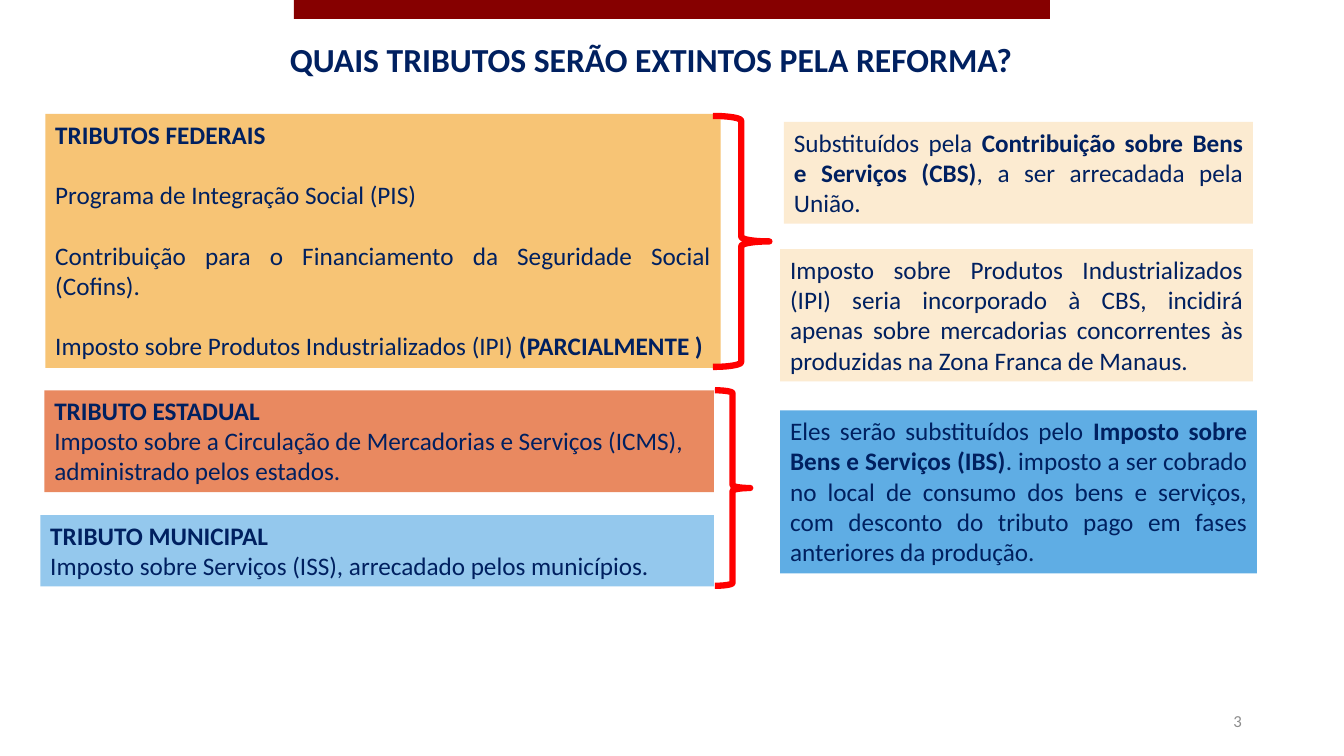
"""Builds the slide on the taxes abolished by the Brazilian tax reform."""
import pptx
import pptx.dml.color
import pptx.enum.shapes
import pptx.enum.text
import pptx.util

Pt = pptx.util.Pt
ALIGN = pptx.enum.text.PP_ALIGN
ANCHOR = pptx.enum.text.MSO_ANCHOR
SHAPE = pptx.enum.shapes.MSO_SHAPE
COLORS = {
    "banner": "860000",
    "text": "002060",
    "number": "8C8C8C",
    "federal": "F7C475",
    "state": "E98960",
    "municipal": "94C8ED",
    "cbs": "FCEBD1",
    "ibs": "5FADE4",
    "brace": "FF0000",
}


class TaxSlide:
    """Holds the style and the current slide."""

    font_name = "Calibri"
    body_size = 18

    def __init__(self, presentation):
        self.slide = presentation.slides.add_slide(presentation.slide_layouts[6])

    def color(self, name):
        return pptx.dml.color.RGBColor.from_string(COLORS[name])

    def shape(self, kind, left, top, width, height):
        shape = self.slide.shapes.add_shape(kind, Pt(left), Pt(top), Pt(width), Pt(height))
        shape.shadow.inherit = False
        return shape

    def block(self, fill, left, top, width, height):
        shape = self.shape(SHAPE.RECTANGLE, left, top, width, height)
        shape.fill.solid()
        shape.fill.fore_color.rgb = self.color(fill)
        shape.line.fill.background()
        return shape

    def brace(self, left, top, width, height):
        shape = self.shape(SHAPE.RIGHT_BRACE, left, top, width, height)
        shape.fill.background()
        shape.line.color.rgb = self.color("brace")
        shape.line.width = Pt(4.5)

    def add_text(self, shape, paragraphs, align, size=body_size, color="text", gap=0, anchor=ANCHOR.TOP):
        frame = shape.text_frame
        frame.word_wrap = True
        frame.vertical_anchor = anchor
        for index, runs in enumerate(paragraphs):
            paragraph = frame.add_paragraph() if index else frame.paragraphs[0]
            paragraph.alignment = align
            if index and gap:
                paragraph.space_before = Pt(gap)
            paragraph.font.name = self.font_name
            paragraph.font.size = Pt(size)
            paragraph.font.color.rgb = self.color(color)
            for text, bold in runs:
                run = paragraph.add_run()
                run.text = text
                if bold:
                    run.font.bold = True

    def card(self, fill, box, paragraphs, align=ALIGN.JUSTIFY, gap=0):
        shape = self.block(fill, *box)
        self.add_text(shape, paragraphs, align, gap=gap)
        shape.text_frame.auto_size = pptx.enum.text.MSO_AUTO_SIZE.SHAPE_TO_FIT_TEXT

    def label(self, box, runs, align, **style):
        shape = self.slide.shapes.add_textbox(*map(Pt, box))
        self.add_text(shape, [runs], align, **style)


def main():
    presentation = pptx.Presentation()
    presentation.slide_width = Pt(960)
    presentation.slide_height = Pt(540)
    slide = TaxSlide(presentation)

    slide.block("banner", 210, 0, 540, 13.5)
    slide.label(
        (32.4, 24.5, 865.4, 36),
        [("QUAIS TRIBUTOS SERÃO EXTINTOS PELA REFORMA?", True)],
        ALIGN.CENTER,
        size=24,
    )
    slide.card("cbs", (560, 87.1, 335, 72.7), [[
        ("Substituídos pela ", False),
        ("Contribuição sobre Bens e Serviços (CBS)", True),
        (", a ser arrecadada pela União.", False),
    ]])
    slide.card("cbs", (557.3, 178, 337.7, 94.5), [[
        ("Imposto sobre Produtos Industrializados (IPI) seria incorporado à CBS, "
         "incidirá apenas sobre mercadorias concorrentes às produzidas na Zona "
         "Franca de Manaus.", False),
    ]])
    slide.card("state", (31.7, 278.8, 478.3, 72.7), [
        [("TRIBUTO ESTADUAL", True)],
        [("Imposto sobre a Circulação de Mercadorias e Serviços (ICMS), "
          "administrado pelos estados.", False)],
    ], ALIGN.LEFT)
    slide.card("municipal", (28.8, 367.9, 481.2, 50.9), [
        [("TRIBUTO MUNICIPAL", True)],
        [("Imposto sobre Serviços (ISS), arrecadado pelos municípios.", False)],
    ], ALIGN.LEFT)
    slide.card("ibs", (557.3, 293.2, 340.6, 116.3), [[
        ("Eles serão substituídos pelo ", False),
        ("Imposto sobre Bens e Serviços (IBS)", True),
        (". imposto a ser cobrado no local de consumo dos bens e serviços, com "
         "desconto do tributo pago em fases anteriores da produção.", False),
    ]])
    slide.card("federal", (32.4, 81.4, 482.4, 181.4), [
        [("TRIBUTOS FEDERAIS", True)],
        [("Programa de Integração Social (PIS)", False)],
        [("Contribuição para o Financiamento da Seguridade Social (Cofins).", False)],
        [("Imposto sobre Produtos Industrializados (IPI) ", False), ("(PARCIALMENTE )", True)],
    ], gap=21.6)
    slide.brace(509.3, 82.8, 40.3, 179.3)
    slide.brace(510.7, 278.8, 25.2, 139.7)
    slide.label(
        (678.2, 500.5, 216, 28.8),
        [("3", False)],
        ALIGN.RIGHT,
        size=12,
        color="number",
        anchor=ANCHOR.MIDDLE,
    )
    presentation.save("out.pptx")


if __name__ == "__main__":
    main()
